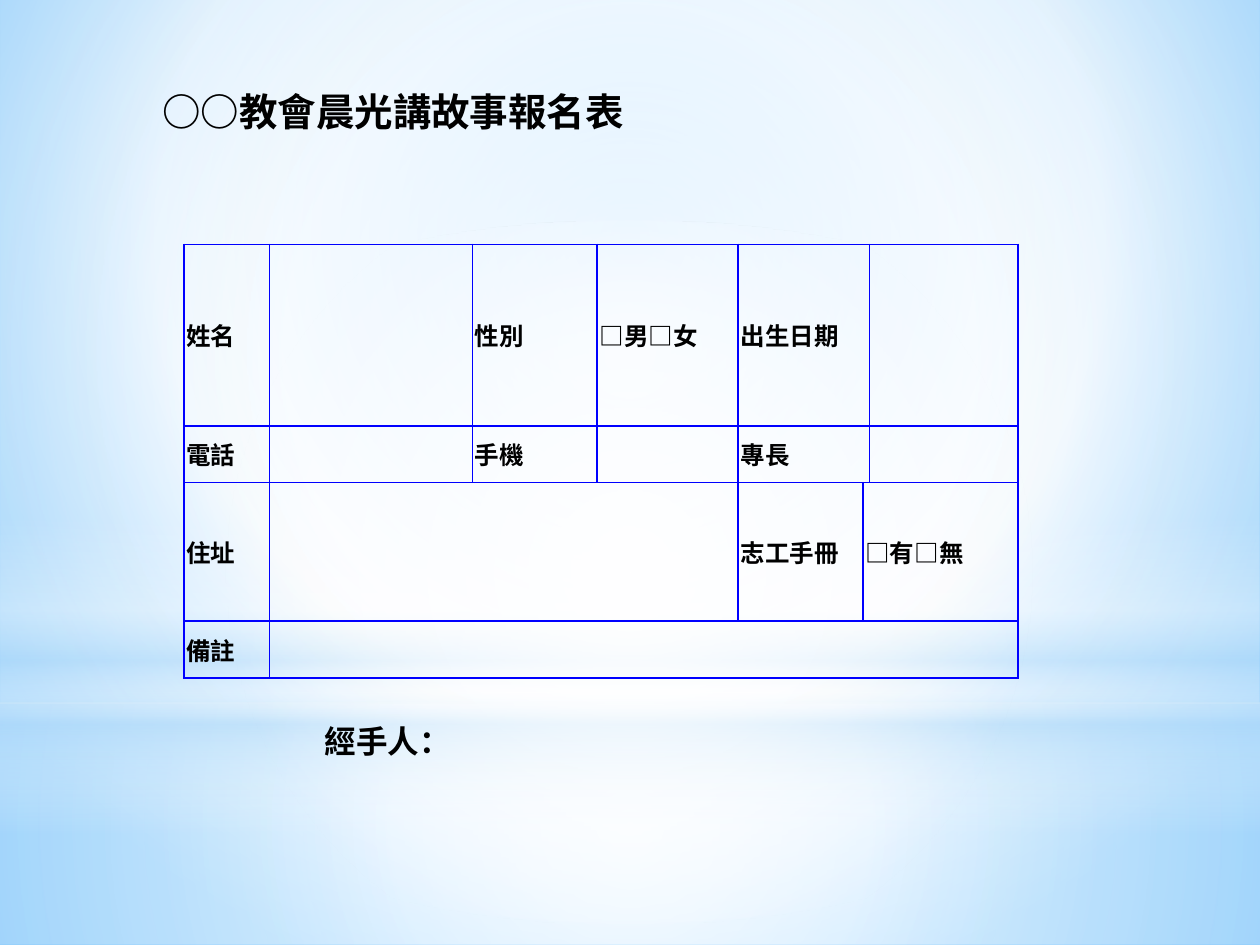
from lxml import etree
from pptx import Presentation
from pptx.dml.color import RGBColor
from pptx.enum import shapes, text
from pptx.oxml import ns
from pptx.util import Inches, Pt

COLORS = {"ink": "000000", "border": "0000FF", "white": "FFFFFF", "mist": "B4DCFA",
          "sky": "9ED5FF", "deep": "5BB9FF"}
CENTER = (50, 50, 50, 50)
COLUMNS = (0.68, 1.61, 0.99, 1.12, 0.99, 0.05, 1.18)
ROWS = (1.44, 0.45, 1.1, 0.45)
LABELS = {(0, 0): "姓名", (0, 2): "性別", (0, 3): "□男□女", (0, 4): "出生日期",
          (1, 0): "電話", (1, 2): "手機", (1, 4): "專長",
          (2, 0): "住址", (2, 4): "志工手冊", (2, 5): "□有□無",
          (3, 0): "備註"}
MERGES = ((0, 4, 5), (1, 4, 5), (2, 1, 3), (2, 5, 6), (3, 1, 6))


def add_node(parent, tag, **attributes):
    """Append a DrawingML element with the given attributes."""
    values = {name: str(value) for name, value in attributes.items()}
    return etree.SubElement(parent, ns.qn(tag), values)


def set_gradient(parent, stops, focus=None):
    """Replace the solid fill of parent by a radial or a vertical gradient."""
    solid = parent.find(ns.qn("a:solidFill"))
    gradient = etree.Element(ns.qn("a:gradFill"), {"rotWithShape": "1"})
    stop_list = add_node(gradient, "a:gsLst")
    for position, color, opacity in stops:
        stop = add_node(stop_list, "a:gs", pos=position * 1000)
        tint = add_node(stop, "a:srgbClr", val=COLORS[color])
        if opacity < 100:
            add_node(tint, "a:alpha", val=opacity * 1000)
    if focus:
        circle = add_node(gradient, "a:path", path="circle")
        sides = {side: value * 1000 for side, value in zip("ltrb", focus)}
        add_node(circle, "a:fillToRect", **sides)
    else:
        add_node(gradient, "a:lin", ang=90 * 60000, scaled=0)
    parent.replace(solid, gradient)


def add_glow(page, kind, top, height, stops, focus=CENTER):
    """Add a full-width backdrop shape with a gradient."""
    glow = page.shapes.add_shape(kind, 0, Inches(top), Inches(10), Inches(height))
    glow.shadow.inherit = False
    glow.line.fill.background()
    glow.fill.solid()
    set_gradient(glow._element.spPr, stops, focus)


def add_backdrop(page):
    """Paint the background and its layers of light."""
    page.background.fill.solid()
    set_gradient(page._element.cSld.bg.bgPr,
                 ((0, "sky", 100), (60, "white", 100), (100, "deep", 100)),
                 (20, 10, 20, 60))
    kinds = shapes.MSO_SHAPE
    add_glow(page, kinds.RECTANGLE, 5.58, 1.92,
             ((0, "white", 91), (37, "white", 76), (100, "mist", 79)))
    add_glow(page, kinds.RECTANGLE, 0, 5.58,
             ((0, "white", 89), (48, "white", 62), (100, "mist", 79)))
    add_glow(page, kinds.RECTANGLE, 4.12, 2.5,
             ((0, "white", 0), (29, "white", 30), (45, "mist", 40),
              (55, "white", 26), (65, "mist", 60), (100, "white", 0)), None)
    add_glow(page, kinds.OVAL, 1.75, 5.58, ((0, "white", 100), (56, "white", 0)))


def write(frame, words, size, name, align=text.PP_ALIGN.LEFT):
    """Write one bold paragraph and return it."""
    para = frame.paragraphs[0]
    para.text = words
    para.alignment = align
    para.font.size = Pt(size)
    para.font.name = name
    para.font.bold = True
    para.font.color.rgb = RGBColor.from_string(COLORS["ink"])
    return para


def set_title(page, words):
    """Place and format the title."""
    title = page.shapes.title
    title.left, title.top = Inches(1.19), Inches(0.6)
    title.width, title.height = Inches(8), Inches(0.6)
    title.text_frame.vertical_anchor = text.MSO_ANCHOR.TOP
    write(title.text_frame, words, 22, "Lato").line_spacing = Pt(30)


def style_cell(cell):
    """Give a cell thin borders, tight margins and no fill."""
    properties = cell._tc.get_or_add_tcPr()
    for side in "LRTB":
        line = add_node(properties, f"a:ln{side}", w=Pt(1))
        add_node(add_node(line, "a:solidFill"), "a:srgbClr", val=COLORS["border"])
    cell.fill.background()
    cell.margin_left = cell.margin_right = Inches(0.02)
    cell.margin_top = cell.margin_bottom = 0
    cell.vertical_anchor = text.MSO_ANCHOR.MIDDLE


def add_form(page):
    """Add the registration table."""
    table = page.shapes.add_table(len(ROWS), len(COLUMNS), Inches(1.46), Inches(1.94),
                                  Inches(sum(COLUMNS)), Inches(sum(ROWS))).table
    table.first_row = table.horz_banding = False
    for column, width in zip(table.columns, COLUMNS):
        column.width = Inches(width)
    for row, height in zip(table.rows, ROWS):
        row.height = Inches(height)
    for cell in table.iter_cells():
        style_cell(cell)
    for row, first, last in MERGES:
        table.cell(row, first).merge(table.cell(row, last))
    for place, label in LABELS.items():
        write(table.cell(*place).text_frame, label, 14, "Calibri", text.PP_ALIGN.JUSTIFY)


def add_handler(page, words):
    """Add the line for the person in charge."""
    box = page.shapes.add_textbox(Inches(2.48), Inches(5.68), Inches(1.22), Inches(0.4))
    box.text_frame.word_wrap = False
    write(box.text_frame, words, 18, "Lato")


def main():
    """Build and save the deck."""
    deck = Presentation()
    deck.slide_width, deck.slide_height = Inches(10), Inches(7.5)
    page = deck.slides.add_slide(deck.slide_layouts[5])
    add_backdrop(page)
    title = page.shapes.title._element
    title.getparent().append(title)
    set_title(page, "○○教會晨光講故事報名表")
    add_form(page)
    add_handler(page, "經手人：")
    deck.save("out.pptx")


if __name__ == "__main__":
    main()
